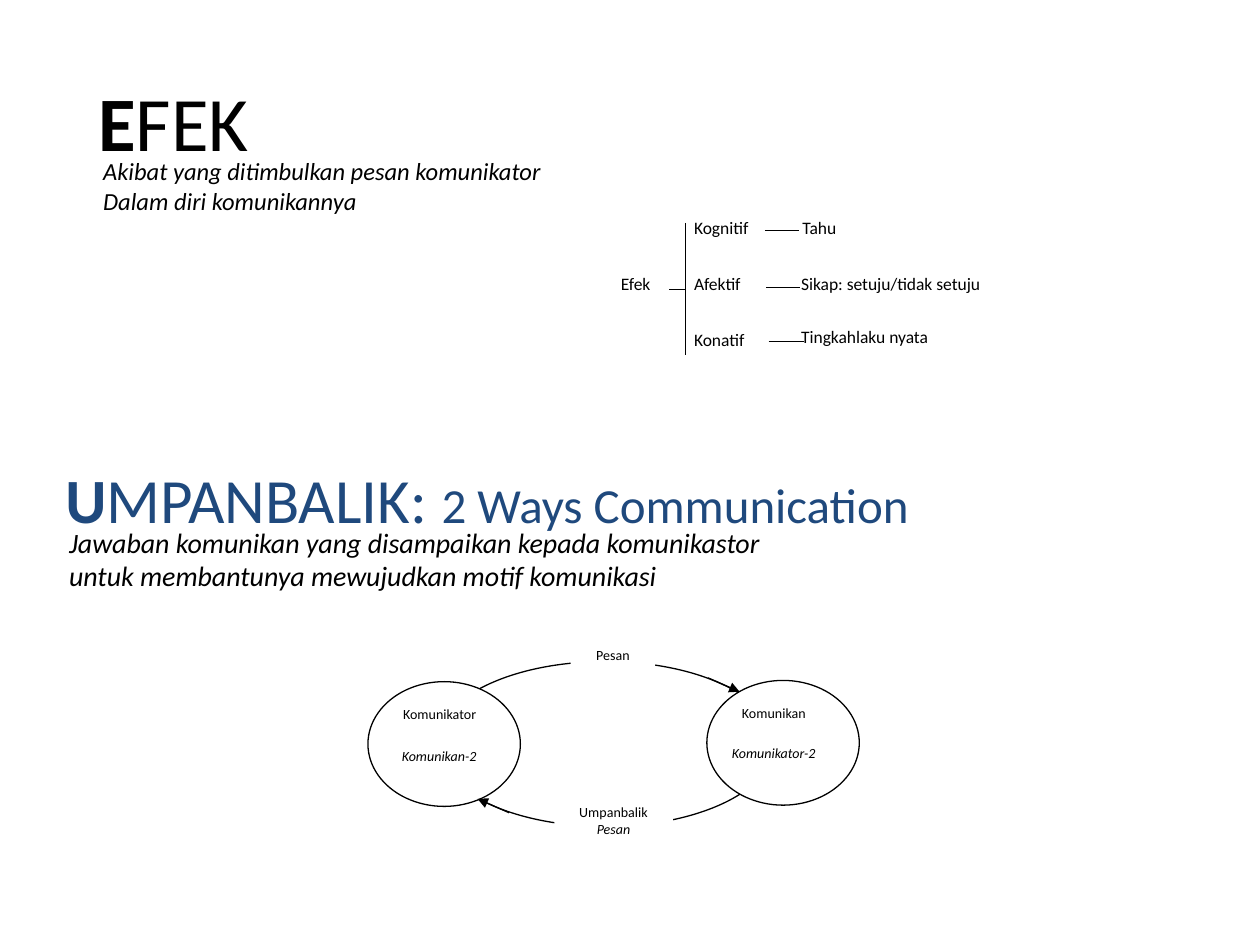
from pptx import Presentation
from pptx.dml.color import RGBColor
from pptx.enum.shapes import MSO_CONNECTOR, MSO_SHAPE
from pptx.enum.text import MSO_ANCHOR, PP_ALIGN
from pptx.oxml.ns import qn
from pptx.util import Inches, Pt
from lxml import etree

BLACK = RGBColor(0x00, 0x00, 0x00)
WHITE = RGBColor(0xFF, 0xFF, 0xFF)
BLUE = RGBColor(0x1F, 0x49, 0x7D)
LEFT, CENTER = PP_ALIGN.LEFT, PP_ALIGN.CENTER
TOP, MIDDLE = MSO_ANCHOR.TOP, MSO_ANCHOR.MIDDLE
OVAL, RECT = MSO_SHAPE.OVAL, MSO_SHAPE.RECTANGLE
STRAIGHT = MSO_CONNECTOR.STRAIGHT

prs = Presentation()
prs.slide_width, prs.slide_height = Inches(10), Inches(7.5)
slide = prs.slides.add_slide(prs.slide_layouts[5])
shapes = slide.shapes


def write(shape, lines, color=BLACK, align=LEFT, anchor=TOP, wrap=True):
    """Fill a shape with lines, each a list of (text, size, style) runs."""
    frame = shape.text_frame
    frame.word_wrap = wrap
    frame.vertical_anchor = anchor
    for i, runs in enumerate(lines):
        para = frame.paragraphs[0] if i == 0 else frame.add_paragraph()
        para.alignment = align
        for text, size, style in runs:
            run = para.add_run()
            run.text = text
            font = run.font
            font.name, font.size = "Calibri", Pt(size)
            font.bold, font.italic = "b" in style, "i" in style
            font.color.rgb = color


def draw(kind, box, fill, line):
    """Add a preset shape; None leaves out its fill or line."""
    shape = shapes.add_shape(kind, *map(Inches, box))
    shape.shadow.inherit = False
    for part, color in ((shape.fill, fill), (shape.line.fill, line)):
        if color is None:
            part.background()
        else:
            part.solid()
            part.fore_color.rgb = color
    if line is not None:
        shape.line.width = Pt(0.75)
    return shape


# Headings
title = shapes.title
title.left, title.top = Inches(0.68), Inches(0.33)
title.width, title.height = Inches(9), Inches(1.25)
write(title, [[("E", 44, "b"), ("FEK", 44, "")]], anchor=MIDDLE)

head = shapes.add_textbox(Inches(0.42), Inches(3.33), Inches(9), Inches(1.25))
write(head, [[("U", 36, "b"), ("MPANBALIK: ", 36, ""),
              ("2 Ways Communication", 28, "")]], BLUE, anchor=MIDDLE)

# Definitions under the headings
notes = [
    ((0.72, 1.19, 3.95, 0.57), 14,
     ["Akibat yang ditimbulkan pesan komunikator",
      "Dalam diri komunikannya"]),
    ((0.45, 4.12, 6.26, 0.64), 16,
     ["Jawaban komunikan yang disampaikan kepada komunikastor",
      "untuk membantunya mewujudkan motif komunikasi"]),
]
for box, size, lines in notes:
    note = shapes.add_textbox(*map(Inches, box))
    write(note, [[(line, size, "i")] for line in lines], wrap=False)

# Feedback loop: the ring lies behind the two roles and the labels
draw(OVAL, (3.46, 5.25, 2.69, 1.31), None, BLACK)
for x, y in ((2.92, 5.41), (5.61, 5.4)):
    draw(OVAL, (x, y, 1.21, 0.99), WHITE, BLACK)

signs = [
    ((4.53, 5.08, 0.67, 0.49), [[("Pesan", 8, "")]]),
    ((4.4, 6.33, 0.94, 0.49), [[("Umpanbalik", 8, "")], [("Pesan", 8, "i")]]),
]
for box, lines in signs:
    write(draw(RECT, box, WHITE, None), lines, align=CENTER)

# Labels of the effect tree and of the roles
labels = [
    ("Efek", 4.83, 2.12, 1.52, 0.44, 10, ""),
    ("Kognitif", 5.41, 1.67, 1.52, 0.44, 10, ""),
    ("Afektif", 5.41, 2.12, 1.52, 0.44, 10, ""),
    ("Konatif", 5.41, 2.56, 1.52, 0.44, 10, ""),
    ("Tahu", 6.27, 1.67, 1.52, 0.44, 10, ""),
    ("Sikap: setuju/tidak setuju", 6.26, 2.12, 2.07, 0.44, 10, ""),
    ("Tingkahlaku nyata", 6.26, 2.54, 1.52, 0.44, 10, ""),
    ("Komunikator", 3.1, 5.55, 1.75, 0.36, 8, ""),
    ("Komunikan-2", 3.09, 5.88, 1.75, 0.36, 8, "i"),
    ("Komunikan", 5.79, 5.54, 1.75, 0.36, 8, ""),
    ("Komunikator-2", 5.71, 5.86, 1.75, 0.36, 8, "i"),
]
for text, x, y, w, h, size, style in labels:
    label = shapes.add_textbox(Inches(x), Inches(y), Inches(w), Inches(h))
    write(label, [[(text, size, style)]])

# Tree branches, then the two arrows of the loop
lines = [
    (5.44, 1.77, 5.44, 2.82, False),
    (5.31, 2.3, 5.44, 2.3, False),
    (6.07, 1.83, 6.34, 1.83, False),
    (6.08, 2.28, 6.35, 2.28, False),
    (6.1, 2.71, 6.38, 2.71, False),
    (5.62, 5.38, 5.87, 5.49, True),
    (4.04, 6.45, 3.79, 6.34, True),
]
for *ends, arrow in lines:
    line = shapes.add_connector(STRAIGHT, *map(Inches, ends))
    line.line.color.rgb = BLACK
    line.line.width = Pt(0.75)
    if arrow:
        etree.SubElement(line.line._get_or_add_ln(), qn("a:tailEnd"),
                         type="triangle")
    etree.SubElement(line._element.spPr, qn("a:effectLst"))

prs.save("out.pptx")
